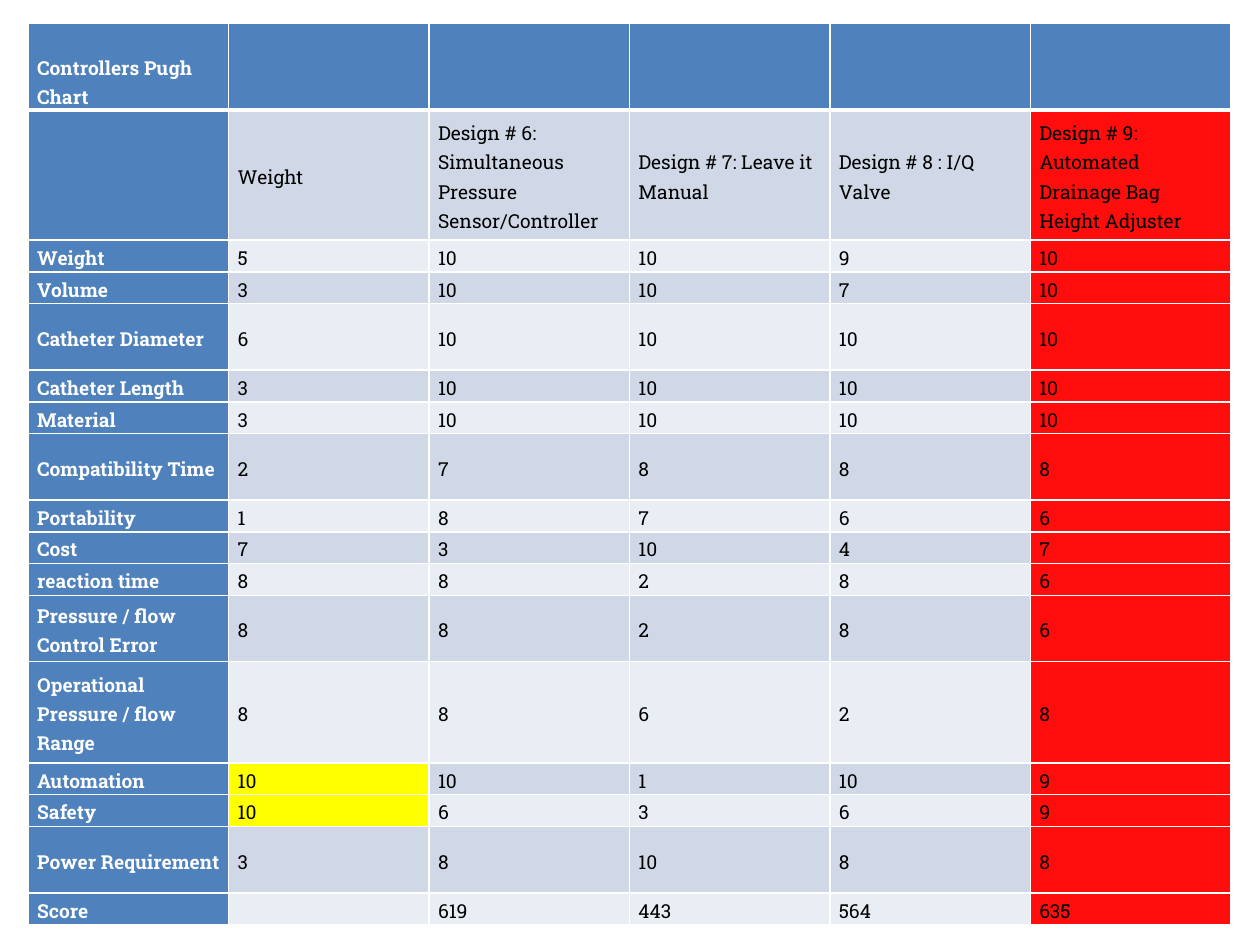
from lxml import etree
from pptx import Presentation
from pptx.dml.color import RGBColor
from pptx.enum.text import MSO_ANCHOR
from pptx.oxml.ns import qn
from pptx.util import Cm, Pt

MIDDLE, BOTTOM = MSO_ANCHOR.MIDDLE, MSO_ANCHOR.BOTTOM
FONT = "Roboto Slab"
SIZE = Pt(11)

WHITE = RGBColor(0xFF, 0xFF, 0xFF)
BLACK = RGBColor(0x00, 0x00, 0x00)
BLUE = RGBColor(0x4F, 0x81, 0xBD)
DARK_BAND = RGBColor(0xD0, 0xD8, 0xE8)
LIGHT_BAND = RGBColor(0xE9, 0xED, 0xF4)
YELLOW = RGBColor(0xFF, 0xFF, 0x00)
RED = RGBColor(0xFF, 0x00, 0x00)

ONE_LINE, TWO_LINES, THREE_LINES = Cm(0.64), Cm(1.34), Cm(2.04)

# Row height, then the text of each column
ROWS = [
    (Cm(1.75), "Controllers Pugh Chart", "", "", "", "", ""),
    (Cm(2.62), "", "Weight", "Design # 6: Simultaneous Pressure Sensor/Controller",
     "Design # 7: Leave it Manual", "Design # 8 : I/Q Valve",
     "Design # 9: Automated Drainage Bag Height Adjuster"),
    (ONE_LINE, "Weight", 5, 10, 10, 9, 10),
    (ONE_LINE, "Volume", 3, 10, 10, 7, 10),
    (TWO_LINES, "Catheter Diameter", 6, 10, 10, 10, 10),
    (ONE_LINE, "Catheter Length", 3, 10, 10, 10, 10),
    (ONE_LINE, "Material", 3, 10, 10, 10, 10),
    (TWO_LINES, "Compatibility Time", 2, 7, 8, 8, 8),
    (ONE_LINE, "Portability", 1, 8, 7, 6, 6),
    (ONE_LINE, "Cost", 7, 3, 10, 4, 7),
    (ONE_LINE, "reaction time", 8, 8, 2, 8, 6),
    (TWO_LINES, "Pressure / flow Control Error", 8, 8, 2, 8, 6),
    (THREE_LINES, "Operational Pressure / flow Range", 8, 8, 6, 2, 8),
    (ONE_LINE, "Automation", 10, 10, 1, 10, 9),
    (ONE_LINE, "Safety", 10, 6, 3, 6, 9),
    (TWO_LINES, "Power Requirement", 3, 8, 10, 8, 8),
    (ONE_LINE, "Score", "", 619, 443, 564, 635),
]
COLUMNS = 6
COLUMN_WIDTH = Cm(4.04)
BEST_COLUMN = COLUMNS - 1
TOP_WEIGHT = 10


def write_cell(cell, text, *, color, bold=False, anchor=MIDDLE):
    cell.vertical_anchor = anchor
    cell.margin_left = cell.margin_right = Cm(0.18)
    cell.margin_top = cell.margin_bottom = 0
    p = cell.text_frame.paragraphs[0]
    p.line_spacing = 1.15
    if not text:
        # An empty cell keeps the small size so that its row does not grow
        etree.SubElement(p._p, qn("a:endParaRPr"), sz=str(SIZE.centipoints))
        return
    r = p.add_run()
    r.text = text
    r.font.name, r.font.size, r.font.bold = FONT, SIZE, bold
    r.font.color.rgb = color


def paint_cell(cell, color, *, top=Pt(1), bottom=Pt(1), alpha=None):
    """Draw white borders, then fill the cell; alpha is a percentage."""
    tc_pr = cell._tc.get_or_add_tcPr()
    for side, width in (("L", Pt(1)), ("R", Pt(1)), ("T", top), ("B", bottom)):
        ln = etree.SubElement(tc_pr, qn(f"a:ln{side}"), w=str(width))
        line_fill = etree.SubElement(ln, qn("a:solidFill"))
        etree.SubElement(line_fill, qn("a:srgbClr"), val=str(WHITE))
    cell.fill.solid()
    cell.fill.fore_color.rgb = color
    if alpha is not None:
        clr = tc_pr.find(f"{qn('a:solidFill')}/{qn('a:srgbClr')}")
        etree.SubElement(clr, qn("a:alpha"), val=str(alpha * 1000))


prs = Presentation()
prs.slide_width, prs.slide_height = Cm(25.4), Cm(19.05)
s = prs.slides.add_slide(prs.slide_layouts[6])

table_height = sum(row[0] for row in ROWS)
table = s.shapes.add_table(len(ROWS), COLUMNS, Cm(0.57), Cm(0.47),
                           COLUMN_WIDTH * COLUMNS, table_height).table
table.first_row = table.horz_banding = False
for column in table.columns:
    column.width = COLUMN_WIDTH

for i, (height, *texts) in enumerate(ROWS):
    table.rows[i].height = height
    for j, text in enumerate(texts):
        cell = table.cell(i, j)
        is_header = i == 0 or j == 0
        alpha = None
        if is_header:
            fill = BLUE
        elif j == BEST_COLUMN:
            fill, alpha = RED, 95
        elif j == 1 and text == TOP_WEIGHT:
            fill = YELLOW
        else:
            fill = DARK_BAND if i % 2 else LIGHT_BAND
        write_cell(cell, str(text), color=WHITE if is_header else BLACK,
                   bold=is_header, anchor=BOTTOM if i == 0 else MIDDLE)
        paint_cell(cell, fill, alpha=alpha, top=Pt(3 if i == 1 else 1),
                   bottom=Pt(3 if i == 0 else 1))

prs.save("out.pptx")
